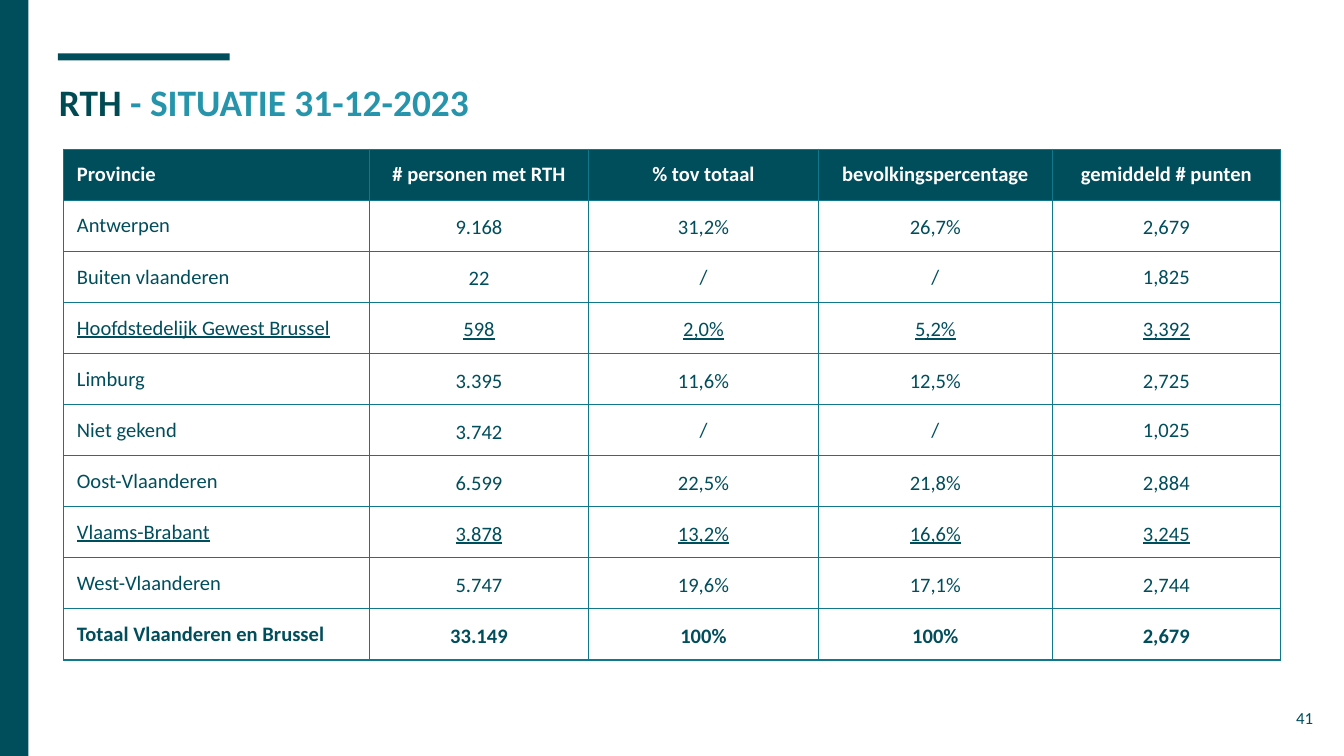
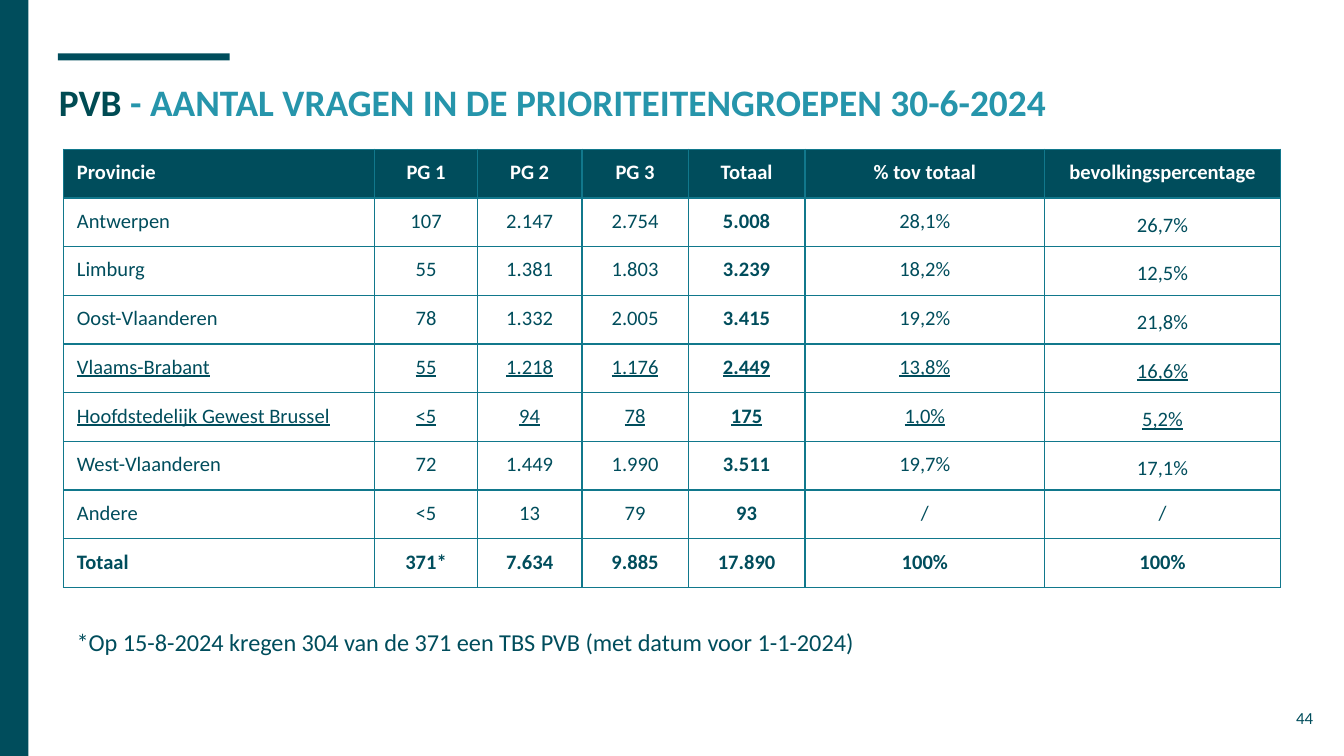
from lxml import etree
from pptx import Presentation
from pptx import util as u
from pptx.dml.color import RGBColor
from pptx.enum import shapes, text
from pptx.oxml import ns

Pt = u.Pt
TEAL = RGBColor(0x00, 0x4D, 0x5C)
TITLE_DARK = RGBColor(0x00, 0x4B, 0x53)
TITLE_LIGHT = RGBColor(0x26, 0x95, 0xAB)
BORDER = RGBColor(0x11, 0x78, 0x8C)
WHITE = RGBColor(0xFF, 0xFF, 0xFF)
FONT = "Calibri"
INSET = Pt(7.2)
TABLE_LEFT, TABLE_TOP = 34, 80

# Shared bars: the short rule above the title and the left band
BARS = [(31, 28.6, 92, 3.8), (0, 0, 15.3, 405)]

# Tables: "loose" cells have wider line spacing
SLIDES = [
    dict(
        title=("RTH", " - SITUATIE 31-12-2023"),
        number="41",
        widths=[164, 117.3, 123.2, 125.3, 122.2],
        row_height=27.36,
        anchor=text.MSO_ANCHOR.MIDDLE,
        top_inset=0,
        bold_columns=[],
        loose_columns=range(1, 5),
        loose_rows=range(1, 10),
        underlined=["Hoofdstedelijk Gewest Brussel", "Vlaams-Brabant"],
        rows=[
            ["Provincie", "# personen met RTH", "% tov totaal", "bevolkingspercentage", "gemiddeld # punten"],
            ["Antwerpen", "9.168", "31,2%", "26,7%", "2,679"],
            ["Buiten vlaanderen", "22", "/", "/", "1,825"],
            ["Hoofdstedelijk Gewest Brussel", "598", "2,0%", "5,2%", "3,392"],
            ["Limburg", "3.395", "11,6%", "12,5%", "2,725"],
            ["Niet gekend", "3.742", "/", "/", "1,025"],
            ["Oost-Vlaanderen", "6.599", "22,5%", "21,8%", "2,884"],
            ["Vlaams-Brabant", "3.878", "13,2%", "16,6%", "3,245"],
            ["West-Vlaanderen", "5.747", "19,6%", "17,1%", "2,744"],
            ["Totaal Vlaanderen en Brussel", "33.149", "100%", "100%", "2,679"],
        ],
        note=None,
    ),
    dict(
        title=("PVB ", "- AANTAL VRAGEN IN DE PRIORITEITENGROEPEN 30-6-2024"),
        number="44",
        widths=[166.8, 55, 56, 57, 62.5, 128.5, 126.2],
        row_height=26.1,
        anchor=text.MSO_ANCHOR.TOP,
        top_inset=5.67,
        bold_columns=[4],
        loose_columns=[6],
        loose_rows=range(1, 7),
        underlined=["Hoofdstedelijk Gewest Brussel", "Vlaams-Brabant"],
        rows=[
            ["Provincie", "PG 1", "PG 2", "PG 3", "Totaal", "% tov totaal", "bevolkingspercentage"],
            ["Antwerpen", "107", "2.147", "2.754", "5.008", "28,1%", "26,7%"],
            ["Limburg", "55", "1.381", "1.803", "3.239", "18,2%", "12,5%"],
            ["Oost-Vlaanderen", "78", "1.332", "2.005", "3.415", "19,2%", "21,8%"],
            ["Vlaams-Brabant", "55", "1.218", "1.176", "2.449", "13,8%", "16,6%"],
            ["Hoofdstedelijk Gewest Brussel", "<5", "94", "78", "175", "1,0%", "5,2%"],
            ["West-Vlaanderen", "72", "1.449", "1.990", "3.511", "19,7%", "17,1%"],
            ["Andere", "<5", "13", "79", "93", "/", "/"],
            ["Totaal", "371*", "7.634", "9.885", "17.890", "100%", "100%"],
        ],
        note="*Op 15-8-2024 kregen 304 van de 371 een TBS PVB (met datum voor 1-1-2024)",
    ),
]


def add_text(page, place, spans, size, bold=False, align=text.PP_ALIGN.LEFT):
    """Add a text box holding one paragraph of (words, colour) spans."""
    box = page.shapes.add_textbox(*map(Pt, place))
    frame = box.text_frame
    frame.word_wrap = True
    frame.margin_left = frame.margin_right = INSET
    frame.margin_top = frame.margin_bottom = INSET
    para = frame.paragraphs[0]
    para.alignment = align
    for words, colour in spans:
        span = para.add_run()
        span.text = words
        span.font.name, span.font.size, span.font.bold = FONT, Pt(size), bold
        span.font.color.rgb = colour


def add_borders(cell):
    """Draw the four thin edges of a table cell."""
    properties = cell._tc.get_or_add_tcPr()
    for edge in ("a:lnL", "a:lnR", "a:lnT", "a:lnB"):
        line = etree.SubElement(properties, ns.qn(edge), w=str(Pt(0.75)))
        fill = etree.SubElement(line, ns.qn("a:solidFill"))
        etree.SubElement(fill, ns.qn("a:srgbClr"), val=str(BORDER))


deck = Presentation()
deck.slide_width, deck.slide_height = Pt(720), Pt(405)

for content in SLIDES:
    page = deck.slides.add_slide(deck.slide_layouts[6])

    # Bars, title and page number
    for place in BARS:
        bar = page.shapes.add_shape(shapes.MSO_SHAPE.RECTANGLE, *map(Pt, place))
        bar.shadow.inherit = False
        bar.fill.solid()
        bar.fill.fore_color.rgb = TEAL
        bar.line.fill.background()
    title_spans = zip(content["title"], (TITLE_DARK, TITLE_LIGHT))
    add_text(page, (24.5, 35.3, 671, 45.4), title_spans, 20, bold=True)
    add_text(page, (667.4, 373.7, 43.2, 31), [(content["number"], TEAL)], 9,
             align=text.PP_ALIGN.RIGHT)

    # Table grid
    rows, widths, row_height = content["rows"], content["widths"], content["row_height"]
    table = page.shapes.add_table(
        len(rows), len(widths), Pt(TABLE_LEFT), Pt(TABLE_TOP),
        Pt(sum(widths)), Pt(row_height * len(rows))).table
    table.first_row = table.horz_banding = False
    for column, width in zip(table.columns, widths):
        column.width = Pt(width)

    # Table cells
    for r, values in enumerate(rows):
        table.rows[r].height = Pt(row_height)
        is_header, is_total = r == 0, r == len(rows) - 1
        for c, value in enumerate(values):
            cell = table.cell(r, c)
            add_borders(cell)
            if is_header:
                cell.fill.solid()
                cell.fill.fore_color.rgb = TEAL
            else:
                cell.fill.background()
            cell.vertical_anchor = content["anchor"]
            cell.margin_left = cell.margin_right = INSET
            cell.margin_top, cell.margin_bottom = Pt(content["top_inset"]), 0

            para = cell.text_frame.paragraphs[0]
            para.text = value
            para.alignment = text.PP_ALIGN.CENTER if c else text.PP_ALIGN.LEFT
            in_loose_area = r in content["loose_rows"] and c in content["loose_columns"]
            if in_loose_area and (c == 1 or "/" not in values):
                para.line_spacing = 1.15
            font = para.runs[0].font
            font.name, font.size = FONT, Pt(11)
            font.color.rgb = WHITE if is_header else TEAL
            font.bold = is_header or is_total or c in content["bold_columns"]
            font.underline = values[0] in content["underlined"]

    # Footnote under the table
    if content["note"]:
        add_text(page, (TABLE_LEFT, 329, 570, 30.2), [(content["note"], TEAL)], 13)

deck.save("out.pptx")
